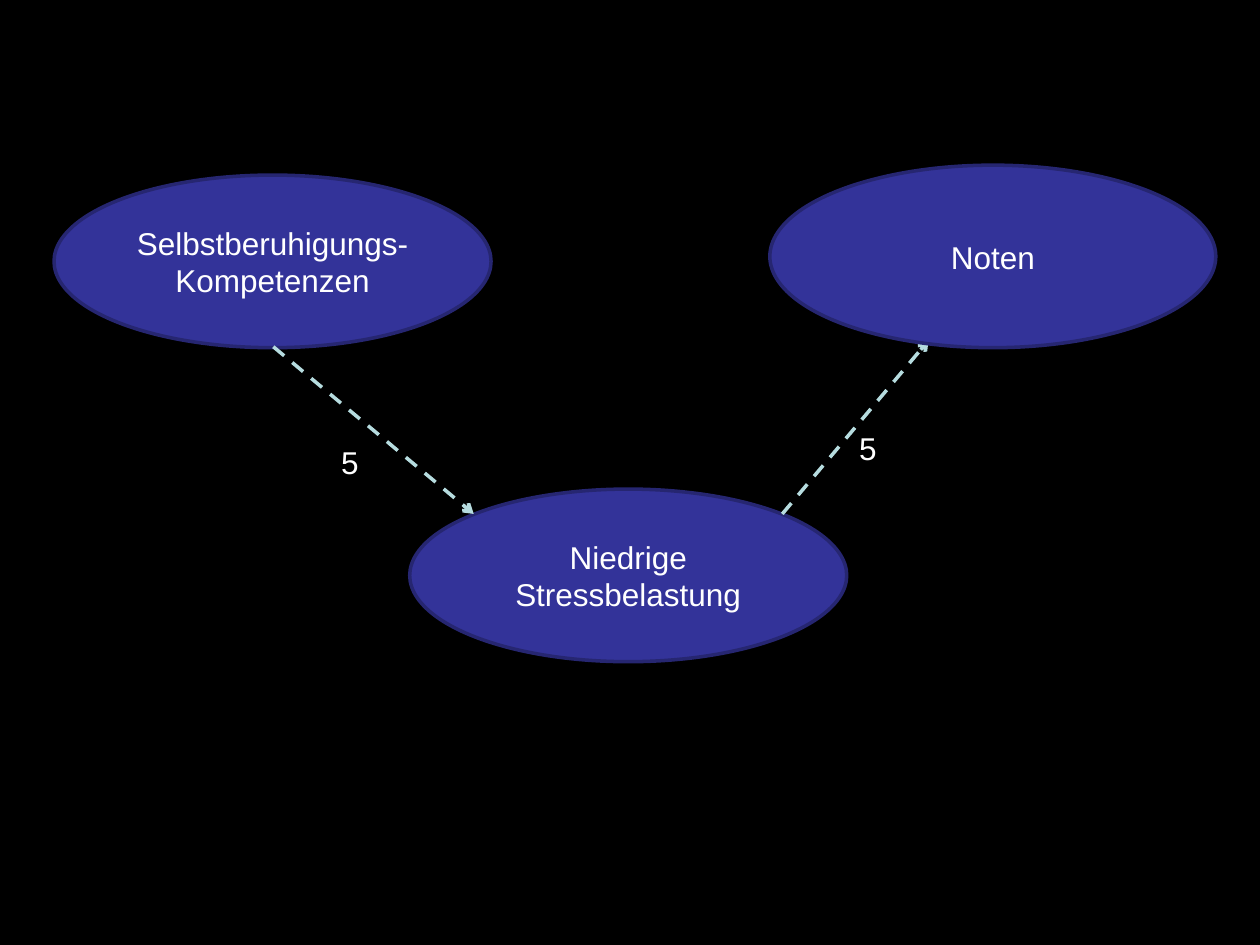
from pptx import Presentation
from pptx.dml.color import RGBColor
from pptx.enum.dml import MSO_LINE
from pptx.enum.shapes import MSO_CONNECTOR, MSO_SHAPE
from pptx.enum.text import MSO_ANCHOR, MSO_AUTO_SIZE, PP_ALIGN
from pptx.oxml.ns import qn
from pptx.util import Cm, Pt
from lxml.etree import SubElement

BLACK = RGBColor(0x00, 0x00, 0x00)
WHITE = RGBColor(0xFF, 0xFF, 0xFF)
BLUE = RGBColor(0x33, 0x33, 0x99)
NAVY = RGBColor(0x26, 0x26, 0x71)
AQUA = RGBColor(0xB6, 0xDC, 0xDF)


def write(frame, text, align=PP_ALIGN.LEFT, anchor=MSO_ANCHOR.TOP, wrap=True):
    frame.text = text
    frame.word_wrap = wrap
    frame.vertical_anchor = anchor
    for para in frame.paragraphs:
        para.alignment = align
        para.font.name = "Arial"
        para.font.size = Pt(18)
        para.font.color.rgb = WHITE


def add_oval(text, x, y, w, h):
    oval = slide.shapes.add_shape(MSO_SHAPE.OVAL, Cm(x), Cm(y), Cm(w), Cm(h))
    oval.shadow.inherit = False
    oval.fill.solid()
    oval.fill.fore_color.rgb = BLUE
    oval.line.color.rgb = NAVY
    oval.line.width = Pt(2)
    write(oval.text_frame, text, align=PP_ALIGN.CENTER, anchor=MSO_ANCHOR.MIDDLE)


# Slide and background
prs = Presentation()
prs.slide_width, prs.slide_height = Cm(25.4), Cm(19.05)
slide = prs.slides.add_slide(prs.slide_layouts[6])
slide.background.fill.solid()
slide.background.fill.fore_color.rgb = BLACK

# Cause and mediator
add_oval("Selbstberuhigungs-\nKompetenzen", 1.09, 3.53, 8.81, 3.48)
add_oval("Niedrige Stressbelastung", 8.26, 9.86, 8.81, 3.48)

# Dashed arrows
for ends in [(5.51, 6.99, 9.55, 10.36), (15.77, 10.36, 18.72, 6.86)]:
    arrow = slide.shapes.add_connector(MSO_CONNECTOR.STRAIGHT, *map(Cm, ends))
    arrow.line.color.rgb = AQUA
    arrow.line.width = Pt(2)
    arrow.line.dash_style = MSO_LINE.DASH
    SubElement(arrow.line._get_or_add_ln(), qn("a:tailEnd"), type="arrow")
    SubElement(arrow._element.spPr, qn("a:effectLst"))

# Arrow labels
for x, y in [(6.63, 8.81), (17.07, 8.53)]:
    label = slide.shapes.add_textbox(Cm(x), Cm(y), Cm(0.86), Cm(1.02))
    write(label.text_frame, "5", wrap=False)
    label.text_frame.auto_size = MSO_AUTO_SIZE.SHAPE_TO_FIT_TEXT

# Outcome, in front of the arrow that ends behind its rim
add_oval("Noten", 15.52, 3.33, 8.99, 3.68)

prs.save("out.pptx")
